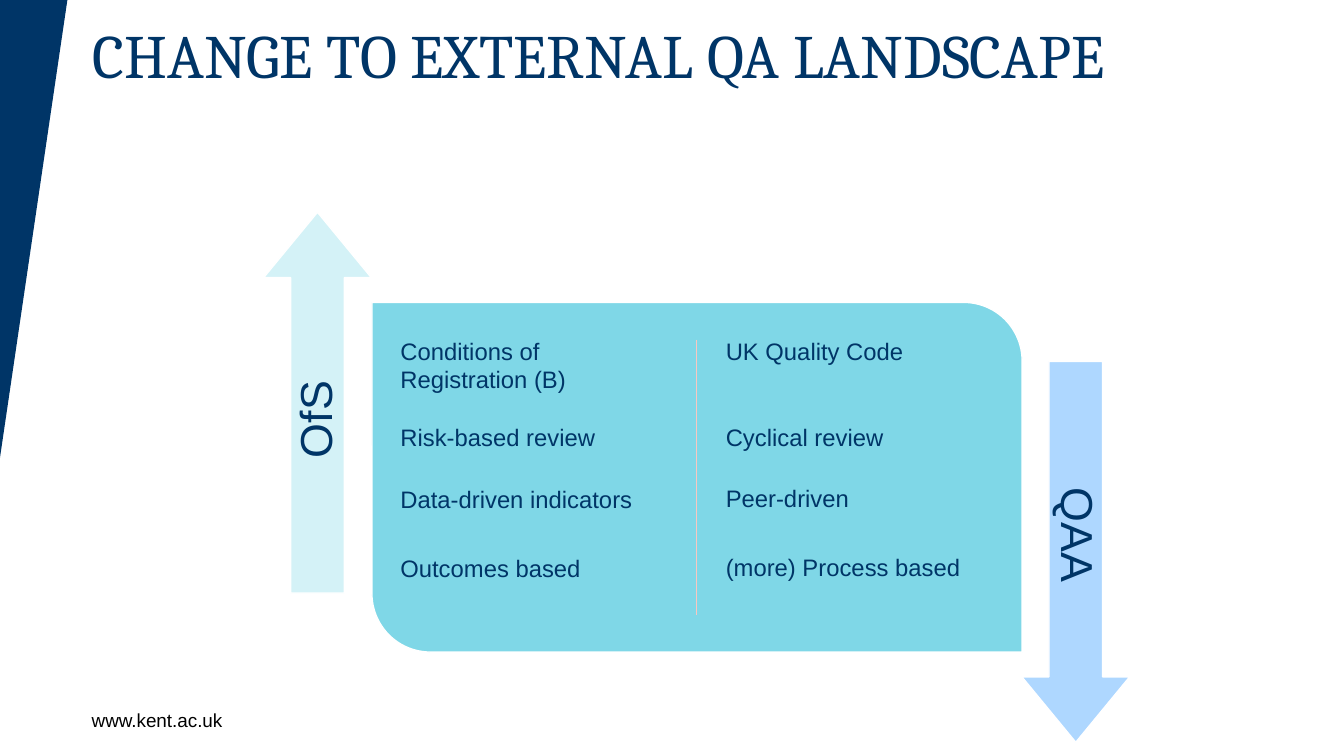
import pptx
import pptx.util
import pptx.dml.color
import pptx.enum.shapes
import pptx.enum.text
import pptx.oxml.ns
import lxml.etree
from dataclasses import dataclass

Pt = pptx.util.Pt
SHAPES = pptx.enum.shapes.MSO_SHAPE
ALIGN = pptx.enum.text.PP_ALIGN
ANCHOR = pptx.enum.text.MSO_ANCHOR


@dataclass(frozen=True)
class Theme:
    navy: str = "003567"
    black: str = "000000"
    white: str = "FFFFFF"
    panel: str = "7FD7E7"
    divider: str = "F9C7C1"
    rising: str = "D4F2F7"
    falling: str = "AED7FF"
    heading_font: str = "Cambria"
    body_font: str = "Arial"
    heading_size: float = 44
    label_size: float = 32
    body_size: float = 17
    footer_size: float = 13.5


def rgb(colour):
    return pptx.dml.color.RGBColor.from_string(colour)


class SlideBuilder:
    def __init__(self, slide, theme):
        self.slide = slide
        self.theme = theme

    def paint(self, shape, fill, outline=None):
        shape.shadow.inherit = False
        shape.fill.solid()
        shape.fill.fore_color.rgb = rgb(fill)
        if outline:
            shape.line.color.rgb = rgb(outline)
            shape.line.width = Pt(1)
        else:
            shape.line.fill.background()

    def polygon(self, points, fill):
        corners = [(Pt(x), Pt(y)) for x, y in points]
        outline = self.slide.shapes.build_freeform(*corners[0])
        outline.add_line_segments(corners[1:], close=True)
        self.paint(outline.convert_to_shape(), fill)

    def preset(self, kind, box, fill, adjustments, rotation=0):
        shape = self.slide.shapes.add_shape(kind, *map(Pt, box))
        for index, value in enumerate(adjustments):
            shape.adjustments[index] = value
        shape.rotation = rotation
        self.paint(shape, fill, self.theme.white)

    def line(self, start, end, colour):
        connector = self.slide.shapes.add_connector(
            pptx.enum.shapes.MSO_CONNECTOR.STRAIGHT, *map(Pt, start + end))
        connector.line.color.rgb = rgb(colour)
        connector.line.width = Pt(1)
        properties = connector._element.spPr
        lxml.etree.SubElement(properties, pptx.oxml.ns.qn("a:effectLst"))

    def text(self, box, lines, size, colour=None, font=None, inset=0, gaps=(0,),
             line_spacing=None, align=ALIGN.LEFT, anchor=ANCHOR.TOP, rotation=0):
        """Write one paragraph per line; gaps holds the space before each."""
        holder = self.slide.shapes.add_textbox(*map(Pt, box))
        holder.rotation = rotation
        frame = holder.text_frame
        frame.word_wrap = True
        frame.vertical_anchor = anchor
        frame.margin_left = frame.margin_right = Pt(inset)
        frame.margin_top = frame.margin_bottom = Pt(inset)
        frame.text = "\n".join(lines)
        for paragraph, gap in zip(frame.paragraphs, gaps):
            paragraph.alignment = align
            if gap:
                paragraph.space_before = Pt(gap)
            if line_spacing:
                paragraph.line_spacing = line_spacing
            for run in paragraph.runs:
                run.font.size = Pt(size)
                run.font.name = font or self.theme.body_font
                run.font.color.rgb = rgb(colour or self.theme.navy)

    def labelled_arrow(self, name, centre, fill, rotation, label_shift):
        """Turn a right arrow about its centre and move its label vertically."""
        x, y = centre
        self.preset(SHAPES.RIGHT_ARROW, (x - 136, y - 38.5, 272, 77), fill,
                    (0.498, 0.607), rotation)
        self.text((x - 124.5, y + label_shift - 19.5, 249, 39), [name],
                  self.theme.label_size, inset=9.4, line_spacing=0.9,
                  align=ALIGN.CENTER, anchor=ANCHOR.MIDDLE, rotation=rotation)


def main():
    deck = pptx.Presentation()
    deck.slide_width, deck.slide_height = Pt(960), Pt(540)
    theme = Theme()
    page = SlideBuilder(deck.slides.add_slide(deck.slide_layouts[6]), theme)

    page.polygon([(0, 0), (48.2, 0), (0, 327)], theme.navy)
    page.text((65.5, 506, 140, 34), ["www.kent.ac.uk"],
              theme.footer_size, colour=theme.black)
    page.text((66, 29, 828, 104), ["CHANGE TO EXTERNAL QA LANDSCAPE"],
              theme.heading_size, font=theme.heading_font, line_spacing=Pt(36))

    page.preset(SHAPES.ROUND_2_DIAG_RECTANGLE, (265.7, 216, 464.4, 249.8),
                theme.panel, (0, 0.167))
    page.line((497.5, 242.6), (497.5, 439.2), theme.divider)
    regulator = ["Conditions of Registration (B)", "Risk-based review",
                 "Data-driven indicators", "Outcomes based"]
    agency = ["UK Quality Code", "Cyclical review",
              "Peer-driven", "(more) Process based"]
    for left, points, second_gap in ((281, regulator, 21), (513.4, agency, 41)):
        page.text((left, 235.4, 201, 211.7), points, theme.body_size,
                  inset=5, gaps=(0, second_gap, 23.3, 29))

    page.labelled_arrow("OfS", (226.8, 287.6), theme.rising, 270, 12)
    page.labelled_arrow("QAA", (768.4, 394.2), theme.falling, 90, -12)

    deck.save("out.pptx")


if __name__ == "__main__":
    main()
